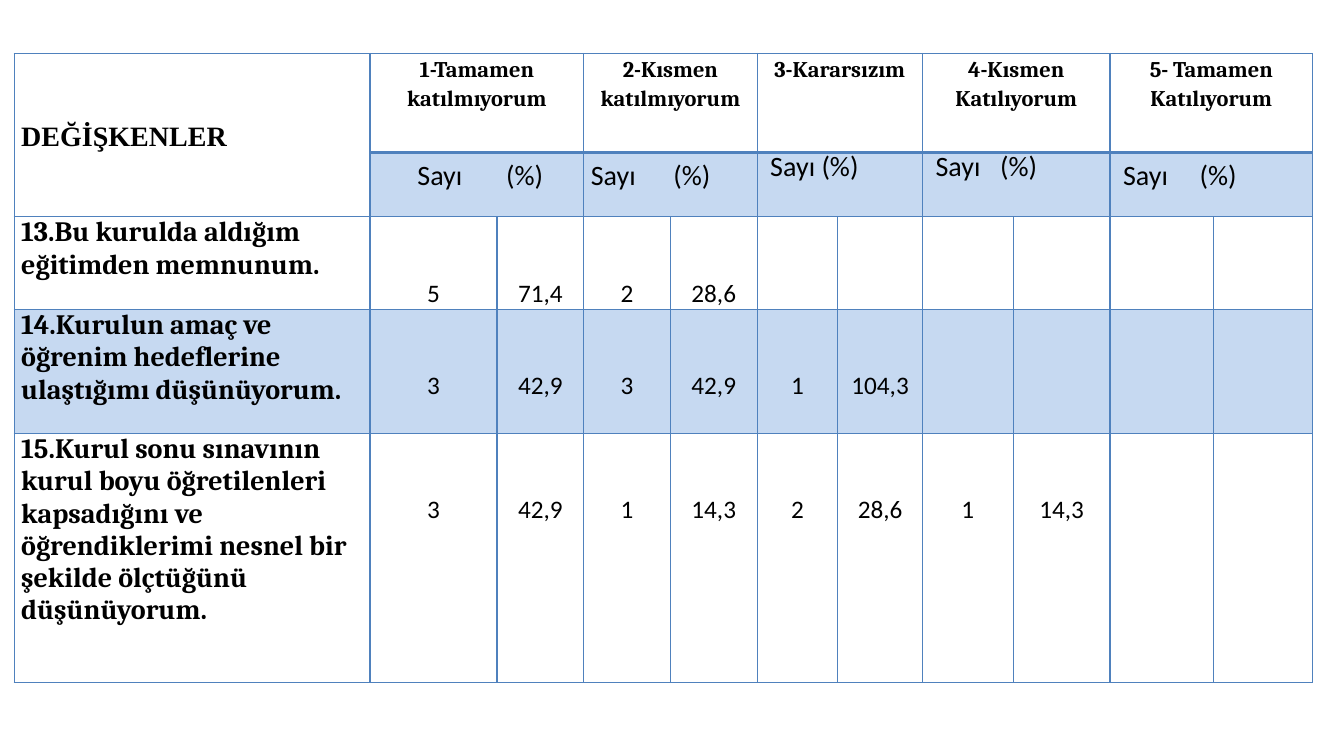
from dataclasses import dataclass

from lxml.etree import SubElement
from pptx import Presentation
from pptx.dml.color import RGBColor
from pptx.enum.text import MSO_ANCHOR, PP_ALIGN
from pptx.oxml.ns import qn
from pptx.table import Table, _Cell
from pptx.util import Inches, Pt

COLORS = {"text": "000000", "border": "4F81BD", "band": "C6D9F1"}
COL_WIDTHS = [3.53, 1.26, 0.86, 0.86, 0.86, 0.8, 0.84, 0.9, 0.96, 1.03, 0.98]
ROW_HEIGHTS = [0.98, 0.64, 0.92, 1.23, 2.47]
BAND_ROWS = (1, 3)
MARGIN = 0.07


@dataclass
class Style:
    font: str
    size: int
    bold: bool = False
    align: PP_ALIGN = PP_ALIGN.LEFT
    spacing: float = 1.0


@dataclass
class Answer:
    title: str
    subtitle: str
    indent: float = 0.0
    tab: float = 0.0
    lift: float = 0.0


@dataclass
class Question:
    text: str
    values: list[str]


CORNER = Style("Times New Roman", 20, True, spacing=1.15)
TITLE = Style("Cambria", 16, True, PP_ALIGN.CENTER, 1.15)
SUBTITLE = Style("Calibri", 20, spacing=Pt(13))
QUESTION = Style("Cambria", 20, True)
VALUE = Style("Calibri", 18, align=PP_ALIGN.CENTER, spacing=3.0)

ANSWERS = [
    Answer("1-Tamamen katılmıyorum", "Sayı\t(%)", 0.4, 0.88),
    Answer("2-Kısmen katılmıyorum", "Sayı\t(%)", 0, 0.82),
    Answer("3-Kararsızım", "Sayı (%)", 0.06, lift=0.18),
    Answer("4-Kısmen Katılıyorum", "Sayı\t(%)", 0.06, 0.64, 0.18),
    Answer("5- Tamamen Katılıyorum", "Sayı\t(%)", 0.06, 0.76),
]
QUESTIONS = [
    Question("13.Bu kurulda aldığım eğitimden memnunum.",
             ["5", "71,4", "2", "28,6"]),
    Question("14.Kurulun amaç ve öğrenim hedeflerine ulaştığımı düşünüyorum.",
             ["3", "42,9", "3", "42,9", "1", "104,3"]),
    Question("15.Kurul sonu sınavının kurul boyu öğretilenleri kapsadığını ve "
             "öğrendiklerimi nesnel bir şekilde ölçtüğünü düşünüyorum.",
             ["3", "42,9", "1", "14,3", "2", "28,6", "1", "14,3"]),
]


def set_borders(cell: _Cell, row: int, col: int) -> None:
    """Thin lines all round, with a heavier one under the answer titles."""
    tc_pr = cell._tc.get_or_add_tcPr()
    for side in "LRTB":
        heavy = col > 0 and (row, side) in ((0, "B"), (1, "T"))
        ln = SubElement(tc_pr, qn(f"a:ln{side}"), w=str(Pt(2.25 if heavy else 1)))
        fill = SubElement(ln, qn("a:solidFill"))
        SubElement(fill, qn("a:srgbClr"), val=COLORS["border"])


def format_cell(cell: _Cell, row: int, col: int) -> None:
    set_borders(cell, row, col)
    cell.margin_left = cell.margin_right = Inches(MARGIN)
    cell.margin_top = cell.margin_bottom = 0
    if row in BAND_ROWS and (row, col) != (1, 0):
        cell.fill.solid()
        cell.fill.fore_color.rgb = RGBColor.from_string(COLORS["band"])
    else:
        cell.fill.background()


def write(cell: _Cell, text: str, style: Style, tab: float = 0) -> None:
    p = cell.text_frame.paragraphs[0]
    p.text = text
    p.alignment = style.align
    p.line_spacing = style.spacing
    if tab:
        tabs = SubElement(p._p.get_or_add_pPr(), qn("a:tabLst"))
        SubElement(tabs, qn("a:tab"), pos=str(Inches(tab)), algn="l")
    for r in p.runs:
        r.font.name = style.font
        r.font.size = Pt(style.size)
        r.font.bold = style.bold
        r.font.color.rgb = RGBColor.from_string(COLORS["text"])


def fill_header(table: Table) -> None:
    corner = table.cell(0, 0)
    corner.merge(table.cell(1, 0))
    corner.vertical_anchor = MSO_ANCHOR.MIDDLE
    write(corner, "DEĞİŞKENLER", CORNER)
    for i, answer in enumerate(ANSWERS):
        col = 1 + 2 * i
        for row in (0, 1):
            table.cell(row, col).merge(table.cell(row, col + 1))
        write(table.cell(0, col), answer.title, TITLE)
        sub = table.cell(1, col)
        sub.vertical_anchor = MSO_ANCHOR.MIDDLE
        sub.margin_left = Inches(MARGIN + answer.indent)
        sub.margin_bottom = Inches(answer.lift)
        write(sub, answer.subtitle, SUBTITLE, answer.tab)


def fill_questions(table: Table) -> None:
    for row, question in enumerate(QUESTIONS, start=2):
        write(table.cell(row, 0), question.text, QUESTION)
        for col, value in enumerate(question.values, start=1):
            write(table.cell(row, col), value, VALUE)


def main() -> None:
    prs = Presentation()
    prs.slide_width, prs.slide_height = Inches(13.33), Inches(7.5)
    s = prs.slides.add_slide(prs.slide_layouts[6])

    # Table grid
    table = s.shapes.add_table(
        len(ROW_HEIGHTS), len(COL_WIDTHS), Inches(0.14), Inches(0.53),
        Inches(sum(COL_WIDTHS)), Inches(sum(ROW_HEIGHTS))).table
    table.first_row = table.horz_banding = False
    for column, width in zip(table.columns, COL_WIDTHS):
        column.width = Inches(width)
    for table_row, height in zip(table.rows, ROW_HEIGHTS):
        table_row.height = Inches(height)
    for row in range(len(ROW_HEIGHTS)):
        for col in range(len(COL_WIDTHS)):
            format_cell(table.cell(row, col), row, col)

    # Table text
    fill_header(table)
    fill_questions(table)
    prs.save("out.pptx")


if __name__ == "__main__":
    main()
